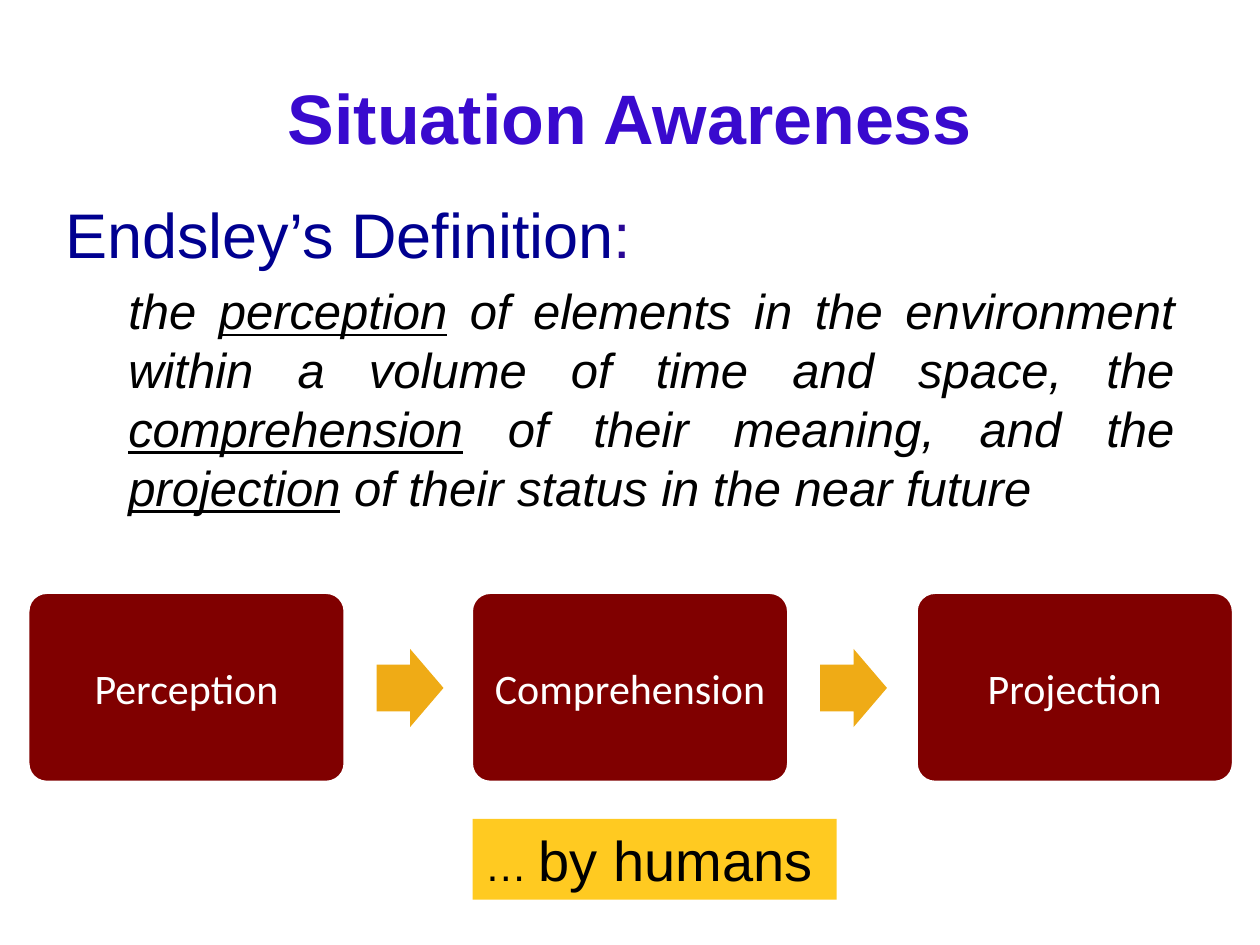
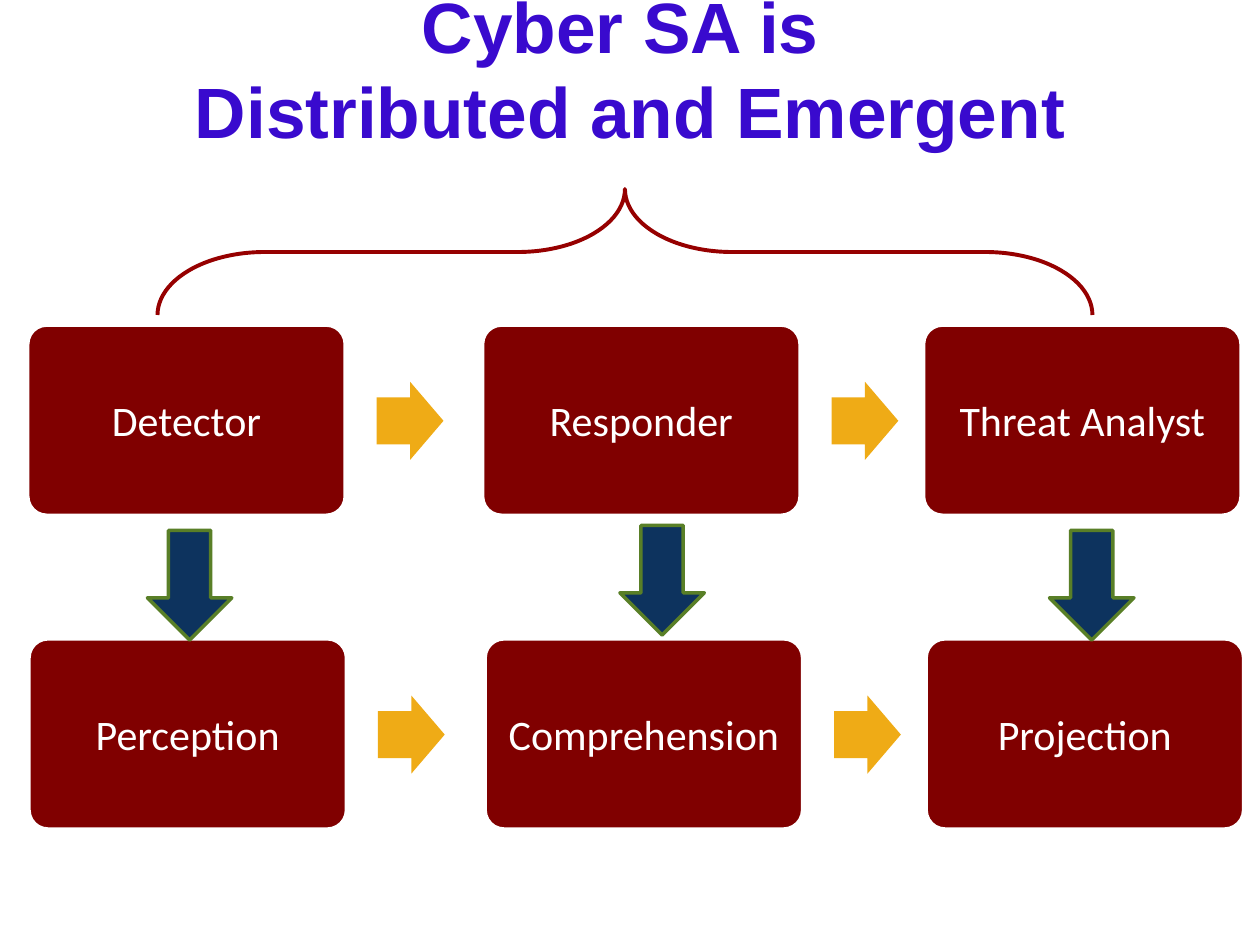
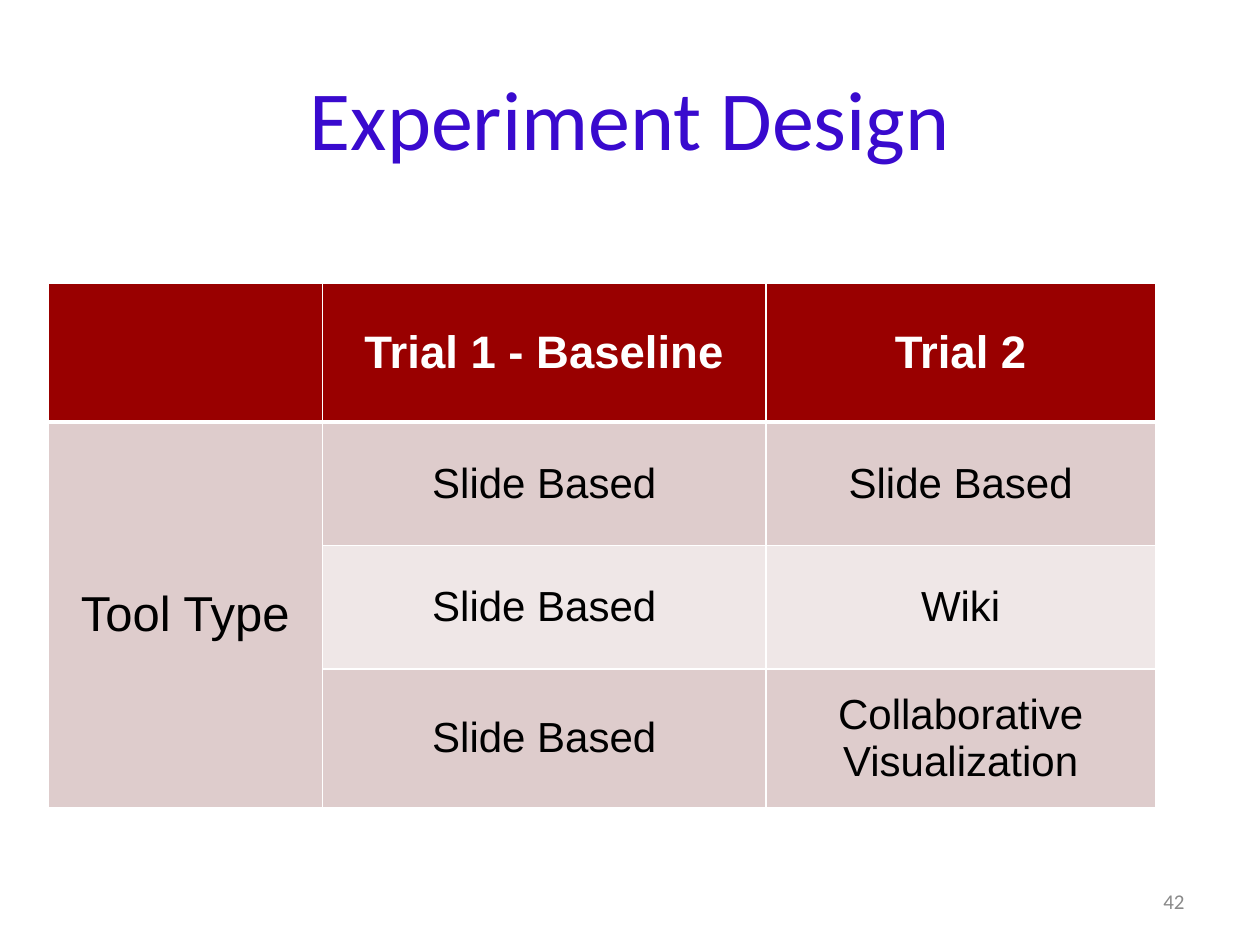
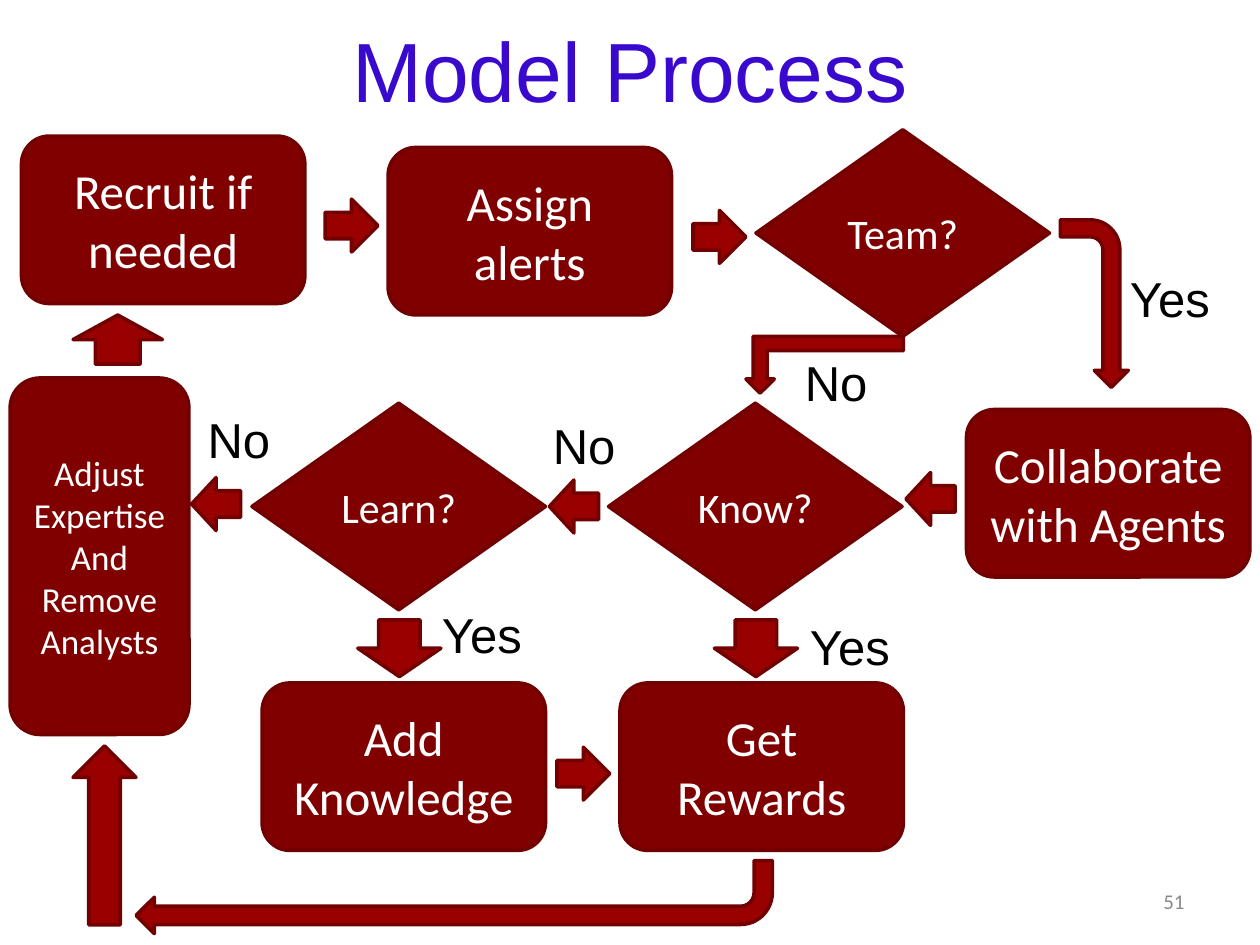
from lxml import etree
from pptx import Presentation
from pptx.dml.color import RGBColor
from pptx.enum.shapes import MSO_SHAPE
from pptx.enum.text import MSO_ANCHOR, PP_ALIGN
from pptx.oxml.ns import qn
from pptx.util import Pt

PX = 9144

RECT = MSO_SHAPE.RECTANGLE
ROUND = MSO_SHAPE.ROUNDED_RECTANGLE
CHOICE = MSO_SHAPE.FLOWCHART_DECISION
RIGHT = MSO_SHAPE.RIGHT_ARROW
LEFT = MSO_SHAPE.LEFT_ARROW
UP = MSO_SHAPE.UP_ARROW
DOWN = MSO_SHAPE.DOWN_ARROW
BENT = MSO_SHAPE.BENT_ARROW
BENT_UP = MSO_SHAPE.BENT_UP_ARROW
BRACE = MSO_SHAPE.RIGHT_BRACE
TOP = MSO_ANCHOR.TOP
MIDDLE = MSO_ANCHOR.MIDDLE
START = PP_ALIGN.LEFT
CENTER = PP_ALIGN.CENTER
END = PP_ALIGN.RIGHT
FULL = PP_ALIGN.JUSTIFY

WHITE = RGBColor(0xFF, 0xFF, 0xFF)
BLACK = RGBColor(0, 0, 0)
VIOLET = RGBColor(0x39, 0x0A, 0xCE)
NAVY = RGBColor(0, 0, 0x90)
INDIGO = RGBColor(0x29, 0x07, 0x95)
MAROON = RGBColor(0x80, 0, 0)
RED = RGBColor(0x99, 0, 0)
EDGE = RGBColor(0x71, 0, 0)
CRIMSON = RGBColor(0x96, 0, 0)
AMBER = RGBColor(0xEF, 0xAB, 0x16)
GOLD = RGBColor(0xFF, 0xCA, 0x21)
BLUE = RGBColor(0x0D, 0x33, 0x5E)
GREEN = RGBColor(0x59, 0x7F, 0x27)
GREY = RGBColor(0x89, 0x89, 0x89)
ROSE = RGBColor(0xDE, 0xCC, 0xCC)
PALE = RGBColor(0xEF, 0xE7, 0xE7)

SANS = "Arial"
BODY = "Calibri"


class Deck:
    def __init__(self):
        self.show = Presentation()
        self.show.slide_width = 1000 * PX
        self.show.slide_height = 750 * PX
        self.slide = None

    def page(self):
        self.slide = self.show.slides.add_slide(self.show.slide_layouts[6])

    def place(self, box):
        return [n * PX for n in box]

    def add_run(self, para, text, size, font=SANS, color=BLACK, marks=""):
        run = para.add_run()
        run.text = text
        face = run.font
        face.size = Pt(size)
        face.name = font
        face.color.rgb = color
        face.bold = "b" in marks
        face.italic = "i" in marks
        face.underline = "u" in marks

    def fill_text(self, frame, paras, align=CENTER, anchor=MIDDLE, inset=None):
        frame.word_wrap = True
        frame.vertical_anchor = anchor
        if inset:
            frame.margin_left = frame.margin_right = inset * PX
            frame.margin_top = frame.margin_bottom = inset * PX
        for i, runs in enumerate(paras):
            para = frame.add_paragraph() if i else frame.paragraphs[0]
            para.alignment = align
            for run in runs:
                self.add_run(para, *run)

    def text(self, box, paras, align=START, anchor=TOP):
        item = self.slide.shapes.add_textbox(*self.place(box))
        self.fill_text(item.text_frame, paras, align, anchor)
        return item.text_frame

    def title(self, lines, top=30, size=40, font=SANS, marks="b"):
        paras = [[(line, size, font, VIOLET, marks)] for line in lines]
        self.text((50, top, 900, 125), paras, CENTER, MIDDLE)

    def number(self, text):
        self.text((717, 695, 233, 40), [[(text, 12, BODY, GREY)]], END, MIDDLE)

    def shape(self, kind, box, fill=None, line=None, width=2, turn=0, adj=()):
        item = self.slide.shapes.add_shape(kind, *self.place(box))
        item.shadow.inherit = False
        item.rotation = turn
        for i, value in enumerate(adj):
            item.adjustments[i] = value
        if fill is None:
            item.fill.background()
        else:
            item.fill.solid()
            item.fill.fore_color.rgb = fill
        if line is None:
            item.line.fill.background()
        else:
            item.line.color.rgb = line
            item.line.width = Pt(width)
        return item

    def chain(self, top, lefts, words):
        for i, (left, word) in enumerate(zip(lefts, words)):
            card = self.shape(ROUND, (left, top, 252, 151), MAROON, WHITE,
                              adj=[0.1])
            self.fill_text(card.text_frame, [[(word, 24, BODY, WHITE)]],
                           inset=14)
            if i < len(words) - 1:
                self.shape(RIGHT, (left + 277, top + 45, 53, 62), AMBER,
                           adj=[0.6, 0.5])

    def node(self, kind, box, lines, size):
        item = self.shape(kind, box, MAROON, EDGE)
        paras = [[(line, size, BODY, WHITE)] for line in lines]
        self.fill_text(item.text_frame, paras)

    def arrow(self, kind, box, turn=0):
        self.shape(kind, box, RED, EDGE, turn=turn)

    def label(self, left, top, word):
        self.text((left, top, 113, 57), [[(word, 28)]])

    def border(self, cell, side, width):
        line = etree.SubElement(cell._tc.get_or_add_tcPr(), qn("a:" + side))
        line.set("w", str(Pt(width)))
        fill = etree.SubElement(line, qn("a:solidFill"))
        etree.SubElement(fill, qn("a:srgbClr")).set("val", str(WHITE))

    def table(self, left, top, cols, rows, data):
        box = self.place((left, top, sum(cols), sum(rows)))
        grid = self.slide.shapes.add_table(len(rows), len(cols), *box).table
        for col, width in zip(grid.columns, cols):
            col.width = width * PX
        for r, (row, high) in enumerate(zip(grid.rows, rows)):
            row.height = high * PX
            for c, cell in enumerate(row.cells):
                self.border(cell, "lnL", 1)
                self.border(cell, "lnR", 1)
                self.border(cell, "lnT", 3 if r == 1 else 1)
                self.border(cell, "lnB", 3 if r == 0 else 1)
                cell.fill.solid()
                shade = PALE if r == 2 and c else ROSE
                cell.fill.fore_color.rgb = RED if r == 0 else shade
                cell.vertical_anchor = MIDDLE
                word = data[r][c]
                if word:
                    para = cell.text_frame.paragraphs[0]
                    para.alignment = CENTER
                    if r == 0:
                        self.add_run(para, word, 26, SANS, WHITE, "b")
                    else:
                        self.add_run(para, word, 24 if c else 28)
        return grid


def aware(deck):
    deck.page()
    deck.title(["Situation Awareness"])
    parts = [("the ", "i"), ("perception", "iu"),
             (" of elements in the environment within a volume of time "
              "and space, the ", "i"),
             ("comprehension", "iu"), (" of their meaning, and the ", "i"),
             ("projection", "iu"),
             (" of their status in the near future", "i")]
    frame = deck.text((42, 150, 900, 495), [
        [("Endsley’s Definition", 36, SANS, NAVY), (":", 36, SANS, INDIGO)],
        [(text, 28, SANS, BLACK, marks) for text, marks in parts]])
    quote = frame.paragraphs[1]
    quote.alignment = FULL
    quote.space_before = Pt(5.6)
    quote._p.get_or_add_pPr().set("marL", str(50 * PX))
    deck.chain(470, (22, 374, 727),
               ("Perception", "Comprehension", "Projection"))
    note = deck.shape(RECT, (375, 650, 289, 64), GOLD)
    deck.fill_text(note.text_frame, [[("… ", 24), ("by humans", 32)]],
                   START, TOP)


def spread(deck):
    deck.page()
    deck.chain(258, (22, 383, 733),
               ("Detector", "Responder", "Threat Analyst"))
    deck.chain(507, (23, 385, 735),
               ("Perception", "Comprehension", "Projection"))
    for left, top in ((117, 421), (492, 417), (833, 421)):
        deck.shape(DOWN, (left, top, 67, 87), BLUE, GREEN)
    deck.shape(BRACE, (446, -171, 100, 742), None, CRIMSON, 2.25, 270,
               (0.85, 0.5))
    deck.title(["Cyber SA is ", "Distributed and Emergent"], -9, 40.7)


def design(deck):
    deck.page()
    deck.title(["Experiment Design"], 30, 48, BODY, "")
    deck.number("42")
    grid = deck.table(38, 225, (218, 352, 309), (110, 98, 98, 110), (
        ("", "Trial 1 - Baseline", "Trial 2"),
        ("Tool Type", "Slide Based", "Slide Based"),
        ("", "Slide Based", "Wiki"),
        ("", "Slide Based", "Collaborative Visualization")))
    grid.cell(1, 0).merge(grid.cell(3, 0))


def process(deck):
    deck.page()
    deck.title(["Model Process"], -8, 48, SANS, "")
    deck.number("51")
    for left, top, word in ((17, 108, "Recruit if needed"),
                            (308, 117, "Assign alerts"),
                            (767, 325, "Collaborate with Agents"),
                            (492, 542, "Get Rewards"),
                            (208, 542, "Add Knowledge")):
        deck.node(ROUND, (left, top, 225, 133), [word], 28)
    for left, top, word in ((600, 103, "Team?"), (200, 320, "Learn?"),
                            (483, 320, "Know?")):
        deck.node(CHOICE, (left, top, 233, 164), [word], 24)
    deck.node(ROUND, (8, 300, 142, 283),
              ["Adjust", "Expertise", "And", "Remove", "Analysts"], 20)
    for left, top in ((258, 158), (550, 167), (442, 593)):
        deck.arrow(RIGHT, (left, top, 42, 42))
    for left, top in ((719, 375), (436, 381), (152, 379)):
        deck.arrow(LEFT, (left, top, 39, 42))
    for left in (284, 567):
        deck.arrow(DOWN, (left, 492, 66, 45))
    deck.arrow(UP, (58, 250, 71, 39))
    deck.arrow(UP, (58, 592, 50, 142))
    deck.arrow(BENT, (802, 214, 133, 54), 90)
    deck.arrow(BENT, (108, 683, 505, 58), 180)
    deck.arrow(BENT_UP, (592, 267, 125, 45), 180)
    for left, top in ((887, 208), (633, 484), (341, 475)):
        deck.label(left, top, "Yes")
    for left, top in ((629, 275), (429, 325), (155, 320)):
        deck.label(left, top, "No")


def main():
    deck = Deck()
    for build in (aware, spread, design, process):
        build(deck)
    deck.show.save("out.pptx")


if __name__ == "__main__":
    main()
